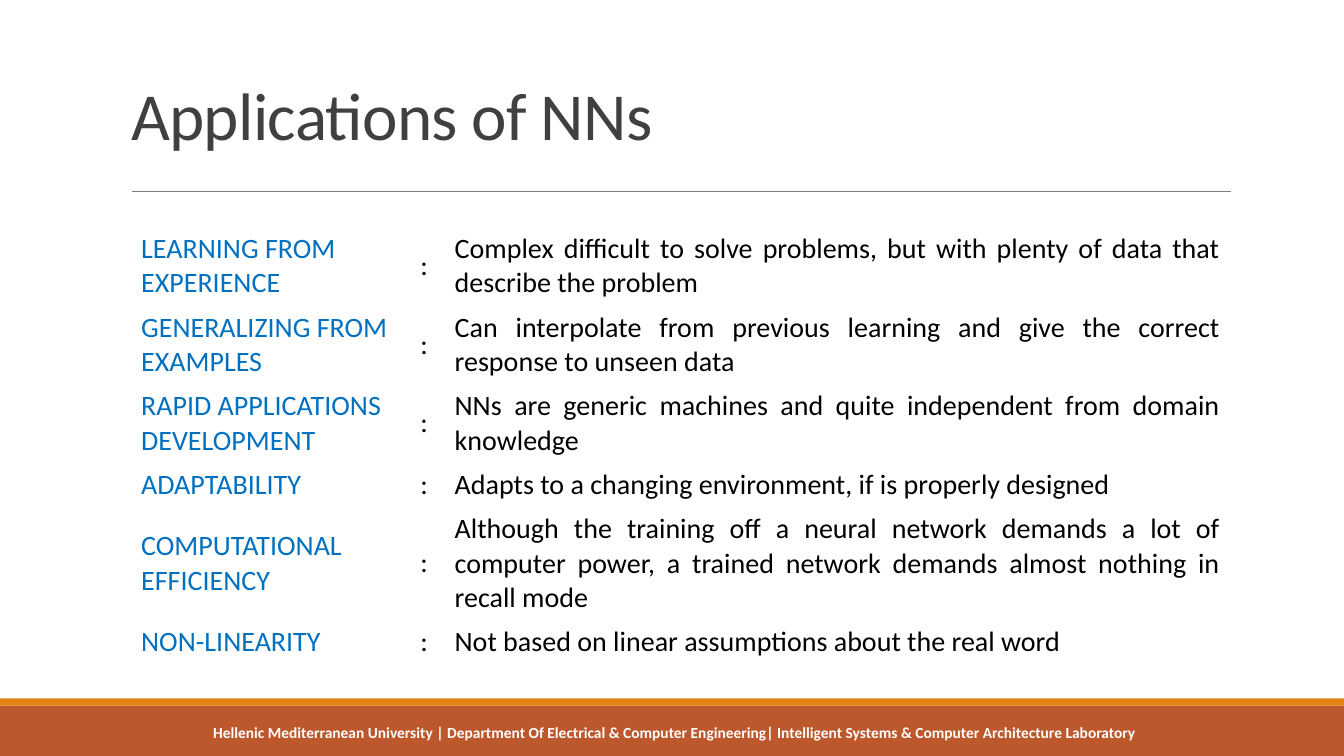
from pptx import Presentation, util as u
from pptx.dml.color import RGBColor
from pptx.enum import shapes, text
from pptx.oxml.ns import qn
from lxml import etree

# Content
TITLE = "Applications of NNs"
FOOTER = ("Hellenic Mediterranean University | Department Of Electrical & Computer Engineering"
          "| Intelligent Systems & Computer Architecture Laboratory")
# Term, explanation, number of text lines
APPLICATIONS = [
    ("LEARNING FROM EXPERIENCE",
     "Complex difficult to solve problems, but with plenty of data that describe the problem", 2),
    ("GENERALIZING FROM EXAMPLES",
     "Can interpolate from previous learning and give the correct response to unseen data", 2),
    ("RAPID APPLICATIONS DEVELOPMENT",
     "NNs are generic machines and quite independent from domain knowledge", 2),
    ("ADAPTABILITY", "Adapts to a changing environment, if is properly designed", 1),
    ("COMPUTATIONAL EFFICIENCY",
     "Although the training off a neural network demands a lot of computer power, "
     "a trained network demands almost nothing in recall mode", 3),
    ("NON-LINEARITY", "Not based on linear assumptions about the real word", 1),
]

FONT = "Calibri"
RUST = RGBColor(0xBD, 0x58, 0x2C)
ORANGE = RGBColor(0xE4, 0x83, 0x12)
GRAY = RGBColor(0x80, 0x80, 0x80)
DARK = RGBColor(0x40, 0x40, 0x40)
BLUE = RGBColor(0x00, 0x70, 0xC0)
BLACK = RGBColor(0, 0, 0)
WHITE = RGBColor(0xFF, 0xFF, 0xFF)

# Layout in inches
WIDTH, HEIGHT = 13.33, 7.5
BARS = [(7, 0.5, RUST), (6.93, 0.07, ORANGE)]
COLUMNS = [2.77, 0.34, 7.79]
LINE_HEIGHT, CELL_PADDING = 0.34, 0.1


def place(left, top, width, height):
    return [u.Inches(value) for value in (left, top, width, height)]


def write(frame, words, size, color, align=text.PP_ALIGN.LEFT, bold=False):
    para = frame.paragraphs[0]
    para.text = words
    para.alignment = align
    font = para.runs[0].font
    font.name, font.size, font.bold = FONT, u.Pt(size), bold
    font.color.rgb = color
    return para


deck = Presentation()
deck.slide_width, deck.slide_height = u.Inches(WIDTH), u.Inches(HEIGHT)
page = deck.slides.add_slide(deck.slide_layouts[5])

# Footer bars
for top, height, color in BARS:
    bar = page.shapes.add_shape(shapes.MSO_SHAPE.RECTANGLE, *place(0, top, WIDTH, height))
    bar.shadow.inherit = False
    bar.fill.solid()
    bar.fill.fore_color.rgb = color
    bar.line.fill.background()

# Rule below the title
rule = page.shapes.add_connector(shapes.MSO_CONNECTOR.STRAIGHT, *place(1.31, 1.9, 12.21, 1.9))
rule.line.color.rgb = GRAY
rule.line.width = u.Pt(0.5)
etree.SubElement(rule.element.spPr, qn("a:effectLst"))

# Title
title = page.shapes.title
title.left, title.top, title.width, title.height = place(1.2, 0.62, 11, 0.96)
title.text_frame.vertical_anchor = text.MSO_ANCHOR.BOTTOM
title.text_frame.word_wrap = True
para = write(title.text_frame, TITLE, 48, DARK)
para.line_spacing = 0.85
para.runs[0].font.element.set("spc", "-50") if hasattr(para.runs[0].font, "element") else \
    para.runs[0]._r.get_or_add_rPr().set("spc", "-50")

# Footer text
footer = page.shapes.add_textbox(*place(0.15, 7.12, 13.09, 0.38))
footer.text_frame.word_wrap = True
write(footer.text_frame, FOOTER, 11, WHITE, text.PP_ALIGN.CENTER, bold=True)

# Table of applications
heights = [lines * LINE_HEIGHT + CELL_PADDING for _, _, lines in APPLICATIONS]
frame = page.shapes.add_table(len(APPLICATIONS), len(COLUMNS),
                              *place(1.3, 2.25, sum(COLUMNS), sum(heights)))
table = frame.table
table.first_row = table.horz_banding = False
for column, width in zip(table.columns, COLUMNS):
    column.width = u.Inches(width)
for row, height, (term, explanation, _) in zip(table.rows, heights, APPLICATIONS):
    row.height = u.Inches(height)
    looks = [(term, BLUE, text.PP_ALIGN.LEFT),
             (":", BLACK, text.PP_ALIGN.LEFT),
             (explanation, BLACK, text.PP_ALIGN.JUSTIFY)]
    for cell, (words, color, align) in zip(row.cells, looks):
        cell.fill.background()
        cell.vertical_anchor = text.MSO_ANCHOR.MIDDLE
        write(cell.text_frame, words, 20, color, align)

deck.save("out.pptx")
